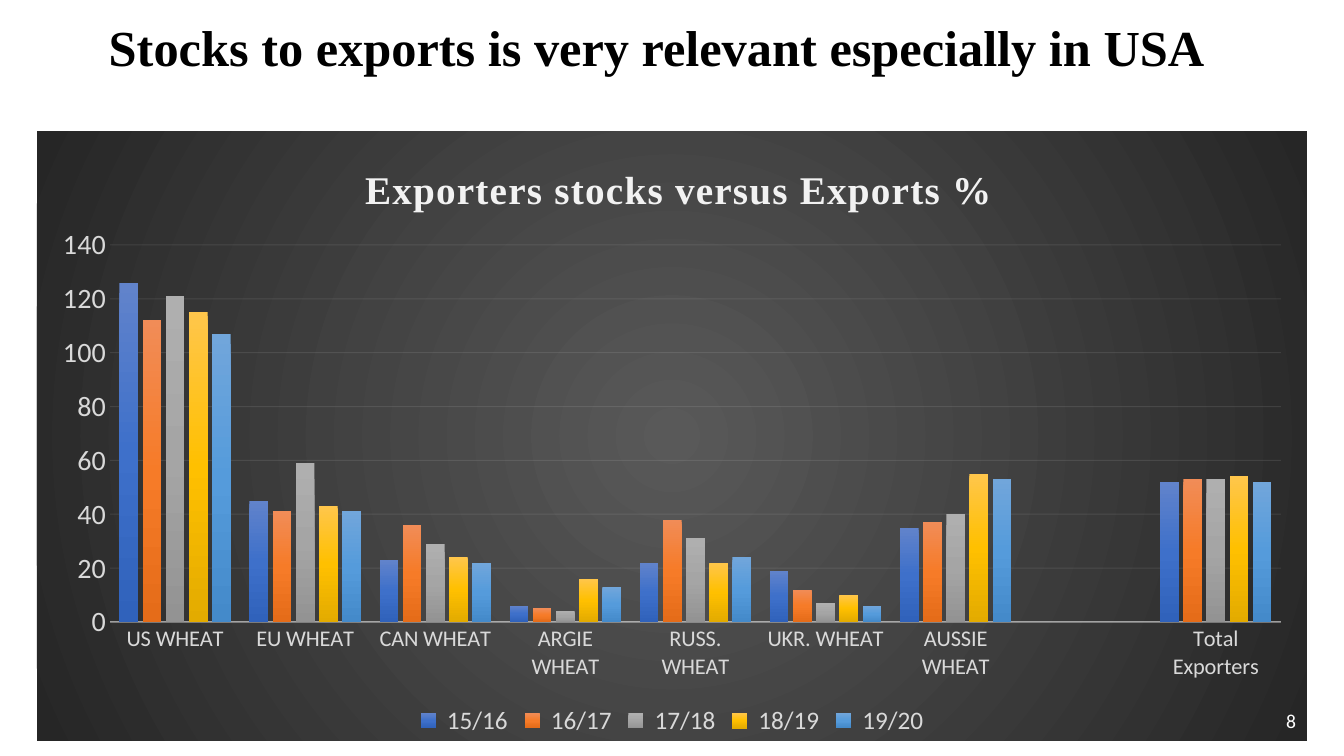
import pptx
import pptx.chart.data
import pptx.dml.color
import pptx.enum.chart
import pptx.enum.text
import pptx.oxml
import pptx.oxml.ns
import pptx.util

# Content
TITLE = "Stocks to exports is very relevant especially in USA"
CHART_TITLE = "Exporters stocks versus Exports %"
PAGE = "8"
EXPORTERS = ["US WHEAT", "EU WHEAT", "CAN WHEAT", "ARGIE WHEAT", "RUSS. WHEAT",
             "UKR. WHEAT", "AUSSIE WHEAT", "", "Total Exporters"]
SEASONS = {
    " 15/16": (126, 45, 23, 6, 22, 19, 35, None, 52),
    " 16/17": (112, 41, 36, 5, 38, 12, 37, None, 53),
    " 17/18": (121, 59, 29, 4, 31, 7, 40, None, 53),
    " 18/19": (115, 43, 24, 16, 22, 10, 55, None, 54),
    " 19/20": (107, 41, 22, 13, 24, 6, 53, None, 52),
}


class Theme:
    serif, sans = "Times New Roman", "Calibri"
    black, white, label, light = "000000", "FFFFFF", "D9D9D9", "F2F2F2"
    backdrop = ("595959", "262626")
    bars = (("6183CB", "3E70CA", "3062BB"), ("F18C57", "F67B28", "E56C19"),
            ("AFAFAF", "A5A5A5", "939393"), ("FFC64B", "FFC000", "E3AB00"),
            ("71A6DB", "559BDB", "448ACA"))
    title, chart_title, values, legend, categories, page = 36, 28, 20, 18, 16, 14


# Places in px: left, top, width, height
SLIDE = (1344, 756)
TITLE_BOX = (63, 11, 1188, 102)
PAGE_BOX = (1004, 701, 302, 40)
CHART_BOX = (37, 131, 1270, 610)
PLOT_BOX = (110, 245, 1171, 377)
CHART_TITLE_AT = (358, 158)

qn = pptx.oxml.ns.qn
NS = pptx.oxml.ns.nsdecls("a", "c")


def px(n):
    return pptx.util.Emu(round(n * 914400 / 100.8))


def rgb(color):
    return pptx.dml.color.RGBColor.from_string(color)


def set_font(font, name, size, color, bold=False):
    font.name, font.size, font.bold = name, pptx.util.Pt(size), bold
    font.color.rgb = rgb(color)


def gradient(colors, direction):
    step = 100000 // (len(colors) - 1)
    stops = "".join(f'<a:gs pos="{i * step}"><a:srgbClr val="{c}"/></a:gs>'
                    for i, c in enumerate(colors))
    return pptx.oxml.parse_xml(
        f'<a:gradFill {NS} rotWithShape="1"><a:gsLst>{stops}</a:gsLst>{direction}</a:gradFill>')


def style_line(fmt, color, width, opacity):
    fmt.line.color.rgb = rgb(color)
    fmt.line.width = pptx.util.Pt(width)
    for clr in fmt.element.find(qn("c:spPr")).iter(qn("a:srgbClr")):
        clr.append(pptx.oxml.parse_xml(f'<a:alpha {NS} val="{opacity * 1000}"/>'))


def layout(box, target=""):
    """Manual chart layout for a px box, as fractions of the chart frame."""
    left, top, width, height = CHART_BOX
    parts = dict(zip("xywh", box))
    fractions = {"x": lambda v: (v - left) / width, "y": lambda v: (v - top) / height,
                 "w": lambda v: v / width, "h": lambda v: v / height}
    modes = '<c:xMode val="edge"/><c:yMode val="edge"/>'
    sizes = "".join(f'<c:{k} val="{fractions[k](v):.4f}"/>' for k, v in parts.items())
    return pptx.oxml.parse_xml(
        f"<c:layout {NS}><c:manualLayout>{target}{modes}{sizes}</c:manualLayout></c:layout>")


def add_text(slide, box, text, align, anchor, *font):
    tf = slide.shapes.add_textbox(*map(px, box)).text_frame
    tf.word_wrap, tf.vertical_anchor = True, anchor
    p = tf.paragraphs[0]
    p.text, p.alignment = text, align
    set_font(p.font, *font)


def add_chart(slide):
    data = pptx.chart.data.CategoryChartData(number_format="0")
    data.categories = EXPORTERS
    for season, values in SEASONS.items():
        data.add_series(season, values)
    kind = pptx.enum.chart.XL_CHART_TYPE.COLUMN_CLUSTERED
    chart = slide.shapes.add_chart(kind, *map(px, CHART_BOX), data).chart
    set_font(chart.font, Theme.sans, 10, Theme.black)

    # Dark radial backdrop
    sp_pr = pptx.oxml.parse_xml(f"<c:spPr {NS}><a:ln><a:noFill/></a:ln></c:spPr>")
    sp_pr.insert(0, gradient(Theme.backdrop, '<a:path path="circle"><a:fillToRect '
                             'l="50000" t="50000" r="50000" b="50000"/></a:path>'))
    chart.element.find(qn("c:chart")).addnext(sp_pr)

    # Title
    tf = chart.chart_title.text_frame
    p = tf.paragraphs[0]
    r = p.add_run()
    r.text = CHART_TITLE
    set_font(p.font, Theme.serif, Theme.chart_title, Theme.light, True)
    set_font(r.font, Theme.serif, Theme.chart_title, Theme.light, True)
    r.font._element.set("spc", "100")
    title = chart.chart_title.element
    for old in title.findall(qn("c:layout")):
        title.remove(old)
    title.find(qn("c:tx")).addnext(layout(CHART_TITLE_AT))
    chart.chart_title.include_in_layout = False

    # Plot area and bars
    area = chart.element.find(qn("c:chart")).find(qn("c:plotArea"))
    for old in area.findall(qn("c:layout")):
        area.remove(old)
    area.insert(0, layout(PLOT_BOX, '<c:layoutTarget val="inner"/>'))
    plot = chart.plots[0]
    plot.gap_width, plot.overlap, plot.vary_by_categories = 100, -24, False
    for series, colors in zip(plot.series, Theme.bars):
        series.format.line.fill.background()
        series.format.element.find(qn("c:spPr")).insert(
            0, gradient(colors, '<a:lin ang="5400000" scaled="0"/>'))

    # Axes
    cat, val = chart.category_axis, chart.value_axis
    for axis, size in ((cat, Theme.categories), (val, Theme.values)):
        axis.major_tick_mark = axis.minor_tick_mark = pptx.enum.chart.XL_TICK_MARK.NONE
        set_font(axis.tick_labels.font, Theme.sans, size, Theme.label)
    style_line(cat.format, Theme.light, 1, 54)
    val.minimum_scale, val.maximum_scale, val.major_unit = 0, 140, 20
    val.tick_labels.number_format = "0"
    val.tick_labels.number_format_is_linked = False
    val.format.line.fill.background()
    style_line(val.major_gridlines.format, Theme.light, 0.75, 10)

    # Legend
    chart.has_legend = True
    chart.legend.position = pptx.enum.chart.XL_LEGEND_POSITION.BOTTOM
    chart.legend.include_in_layout = False
    set_font(chart.legend.font, Theme.sans, Theme.legend, Theme.label)


def main():
    prs = pptx.Presentation()
    prs.slide_width, prs.slide_height = map(px, SLIDE)
    slide = prs.slides.add_slide(prs.slide_layouts[6])
    align, anchor = pptx.enum.text.PP_ALIGN, pptx.enum.text.MSO_ANCHOR
    add_chart(slide)
    add_text(slide, PAGE_BOX, PAGE, align.RIGHT, anchor.MIDDLE,
             Theme.sans, Theme.page, Theme.white)
    add_text(slide, TITLE_BOX, TITLE, align.CENTER, anchor.TOP,
             Theme.serif, Theme.title, Theme.black, True)
    prs.save("out.pptx")


if __name__ == "__main__":
    main()
